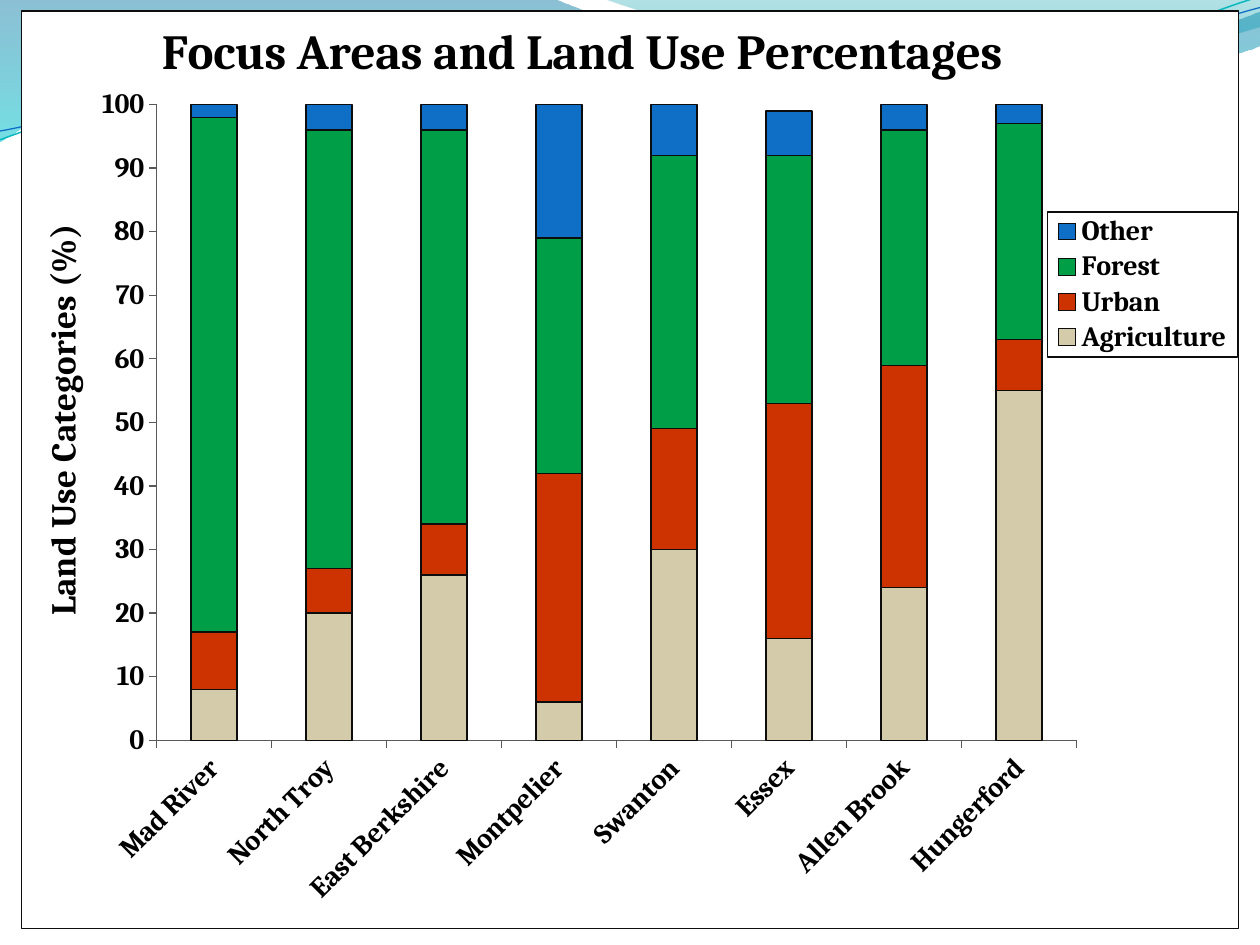
from dataclasses import dataclass
from typing import Optional

import pptx
import pptx.chart.data
import pptx.dml.color
import pptx.enum.chart
import pptx.oxml
import pptx.oxml.ns
import pptx.util

RGB = pptx.dml.color.RGBColor
Inches, Pt = pptx.util.Inches, pptx.util.Pt
qn, nsdecls = pptx.oxml.ns.qn, pptx.oxml.ns.nsdecls
XL = pptx.enum.chart

W, H = 10, 7.5
FONT = "Cambria"
BLACK, INK, AXIS = RGB(0, 0, 0), RGB(0x0D, 0x0D, 0x0D), RGB(0x59, 0x59, 0x59)
TAN, RED = RGB(0xD3, 0xCB, 0xA9), RGB(0xCC, 0x33, 0x00)
GREEN, BLUE = RGB(0x00, 0x9E, 0x47), RGB(0x0F, 0x6F, 0xC6)
DEEP, AQUA = RGB(0x00, 0x74, 0xA1), RGB(0x00, 0xC6, 0xCF)
TEAL, SKY = RGB(0x00, 0xA1, 0xA9), RGB(0x00, 0x8B, 0xBF)
CYAN = RGB(0x0A, 0xB8, 0xBF)


@dataclass
class Stop:
    position: float
    color: RGB
    opacity: int


@dataclass
class Wave:
    """Outline in inches: a 2-tuple is a line, a 6-tuple a Bezier curve."""
    start: tuple
    segments: list
    stops: Optional[list] = None
    line: Optional[RGB] = None
    width: float = 0.75


@dataclass
class LandUse:
    name: str
    color: RGB
    values: tuple


WAVES = [
    Wave((0, 0), [(4.4, -0.01), (4.76, 0.17, 6.64, 0.63, 7.58, 0.63),
                  (8.53, 0.63, 9.58, 0.26, 10, 0.09), (10.01, 0.36),
                  (9.83, 0.44, 8.7, 0.76, 7.46, 0.75),
                  (6.22, 0.75, 3.82, 0.28, 2.57, 0.34),
                  (1.29, 0.36, 0.46, 0.83, -0.01, 1.13)],
         stops=[Stop(0, DEEP, 45), Stop(1, AQUA, 55)]),
    Wave((4.79, -0.01), [(5.09, 0.11, 6.82, 0.62, 7.69, 0.65),
                         (8.56, 0.69, 9.61, 0.32, 10, 0.21), (10, 0)],
         stops=[Stop(0, TEAL, 30), Stop(0.8, SKY, 45)]),
    Wave((0, 1.11), [(0.48, 0.93, 1.58, 0.57, 2.77, 0.52),
                     (3.95, 0.47, 5.93, 0.89, 7.13, 0.8),
                     (8.33, 0.71, 9.38, 0.15, 9.98, -0.02)], line=CYAN, width=0.85),
    Wave((0, 1.04), [(0.47, 0.96, 1.64, 0.61, 2.83, 0.56),
                     (4.03, 0.51, 5.97, 0.84, 7.17, 0.75),
                     (8.36, 0.67, 9.41, 0.21, 10, 0.06)], line=BLUE),
]

AREAS = ["Mad River", "North Troy", "East Berkshire", "Montpelier",
         "Swanton", "Essex", "Allen Brook", "Hungerford"]
LAND_USES = [
    LandUse("Agriculture", TAN, (8, 20, 26, 6, 30, 16, 24, 55)),
    LandUse("Urban", RED, (9, 7, 8, 36, 19, 37, 35, 8)),
    LandUse("Forest", GREEN, (81, 69, 62, 37, 43, 39, 37, 34)),
    LandUse("Other", BLUE, (2, 4, 4, 21, 8, 7, 4, 3)),
]


def bend(sp, wave: Wave) -> None:
    """Turn the straight sides that stand for curves into Bezier curves."""
    sides = list(sp.element.iter(qn("a:lnTo")))
    for side, seg in zip(sides, wave.segments):
        if len(seg) == 2:
            continue
        pts = "".join(f'<a:pt x="{Inches(x) - sp.left}" y="{Inches(y) - sp.top}"/>'
                      for x, y in zip(seg[::2], seg[1::2]))
        curve = pptx.oxml.parse_xml(
            f'<a:cubicBezTo {nsdecls("a")}>{pts}</a:cubicBezTo>')
        side.getparent().replace(side, curve)


def draw_wave(s, wave: Wave) -> None:
    fb = s.shapes.build_freeform(*map(Inches, wave.start), scale=1.0)
    ends = [(Inches(seg[-2]), Inches(seg[-1])) for seg in wave.segments]
    fb.add_line_segments(ends, close=wave.stops is not None)
    sp = fb.convert_to_shape()
    bend(sp, wave)
    sp.shadow.inherit = False
    if wave.stops is None:
        sp.fill.background()
        sp.line.color.rgb = wave.line
        sp.line.width = Pt(wave.width)
        return
    sp.line.fill.background()
    sp.fill.gradient()
    sp.fill.gradient_angle = 270
    for gs, stop in zip(sp.fill.gradient_stops, wave.stops):
        gs.position = stop.position
        gs.color.rgb = stop.color
    for clr, stop in zip(sp.element.spPr.iter(qn("a:srgbClr")), wave.stops):
        clr.append(pptx.oxml.parse_xml(
            f'<a:alpha {nsdecls("a")} val="{stop.opacity * 1000}"/>'))


def style_font(font, size: float, bold: bool = True) -> None:
    font.name, font.size, font.bold = FONT, Pt(size), bold
    font.color.rgb = BLACK


def place(el, index: int, inner: bool = False, **shares: float) -> None:
    """Lay out a chart part by shares (x, y, w, h) of the chart's size."""
    for old in el.findall(qn("c:layout")):
        el.remove(old)
    target = '<c:layoutTarget val="inner"/>' if inner else ""
    modes = "".join(f'<c:{k}Mode val="edge"/>' for k in "xy")
    sizes = "".join(f'<c:{k} val="{v}"/>' for k, v in shares.items())
    el.insert(index, pptx.oxml.parse_xml(
        f'<c:layout {nsdecls("c")}><c:manualLayout>'
        f'{target}{modes}{sizes}</c:manualLayout></c:layout>'))


def frame_after(el) -> None:
    """Give a chart part a white fill and thin dark border."""
    el.addnext(pptx.oxml.parse_xml(
        f'<c:spPr {nsdecls("c", "a")}>'
        '<a:solidFill><a:srgbClr val="FFFFFF"/></a:solidFill>'
        f'<a:ln w="{Pt(0.75)}"><a:solidFill><a:srgbClr val="{INK}"/></a:solidFill></a:ln>'
        '</c:spPr>'))


def set_title(title, text: str, size: float, x: float, y: float):
    tf = title.text_frame
    r = tf.paragraphs[0].add_run()
    r.text = text
    style_font(r.font, size)
    place(title._element, 1, x=x, y=y)
    return tf


def style_axis(axis) -> None:
    axis.has_major_gridlines = False
    axis.major_tick_mark = XL.XL_TICK_MARK.OUTSIDE
    axis.format.line.color.rgb = AXIS
    style_font(axis.tick_labels.font, 16)


def draw_chart(s) -> None:
    data = pptx.chart.data.CategoryChartData()
    data.categories = AREAS
    for use in LAND_USES:
        data.add_series(use.name, use.values)
    chart = s.shapes.add_chart(
        XL.XL_CHART_TYPE.COLUMN_STACKED, Inches(0.0165 * W), Inches(0.011 * H),
        Inches(0.967 * W), Inches(0.972 * H), data).chart
    style_font(chart.font, 10, False)
    frame_after(chart._chartSpace.find(qn("c:chart")))

    # Columns
    plot = chart.plots[0]
    plot.gap_width, plot.overlap, plot.vary_by_categories = 150, 100, False
    for series, use in zip(plot.series, LAND_USES):
        series.format.fill.solid()
        series.format.fill.fore_color.rgb = use.color
        series.format.line.color.rgb = INK
        series.format.line.width = Pt(0.75)
    place(chart._chartSpace.chart.plotArea, 0, inner=True, x=0.111, y=0.102, w=0.756, h=0.693)

    # Axes
    cat, val = chart.category_axis, chart.value_axis
    style_axis(cat)
    style_axis(val)
    cat._element.find(qn("c:txPr")).find(qn("a:bodyPr")).set("rot", "-2700000")
    val.minimum_scale, val.maximum_scale, val.major_unit = 0, 100, 10
    val.tick_labels.number_format = "0"
    val.tick_labels.number_format_is_linked = False

    # Titles
    chart.has_title = val.has_title = True
    set_title(chart.chart_title, "Focus Areas and Land Use Percentages", 28, 0.108, -0.008)
    tf = set_title(val.axis_title, "Land Use Categories (%)", 20, 0.01, 0.226)
    tf._txBody.find(qn("a:bodyPr")).set("rot", "-5400000")

    # Legend
    chart.has_legend = True
    legend = chart.legend
    legend.position = XL.XL_LEGEND_POSITION.RIGHT
    legend.include_in_layout = False
    style_font(legend.font, 16)
    place(legend._element, 1, x=0.843, y=0.219, w=0.156, h=0.158)
    frame_after(legend._element.find(qn("c:overlay")))


def main() -> None:
    prs = pptx.Presentation()
    prs.slide_width, prs.slide_height = Inches(W), Inches(H)
    s = prs.slides.add_slide(prs.slide_layouts[6])
    # Waves along the top edge
    for wave in WAVES:
        draw_wave(s, wave)
    draw_chart(s)
    prs.save("out.pptx")


if __name__ == "__main__":
    main()
